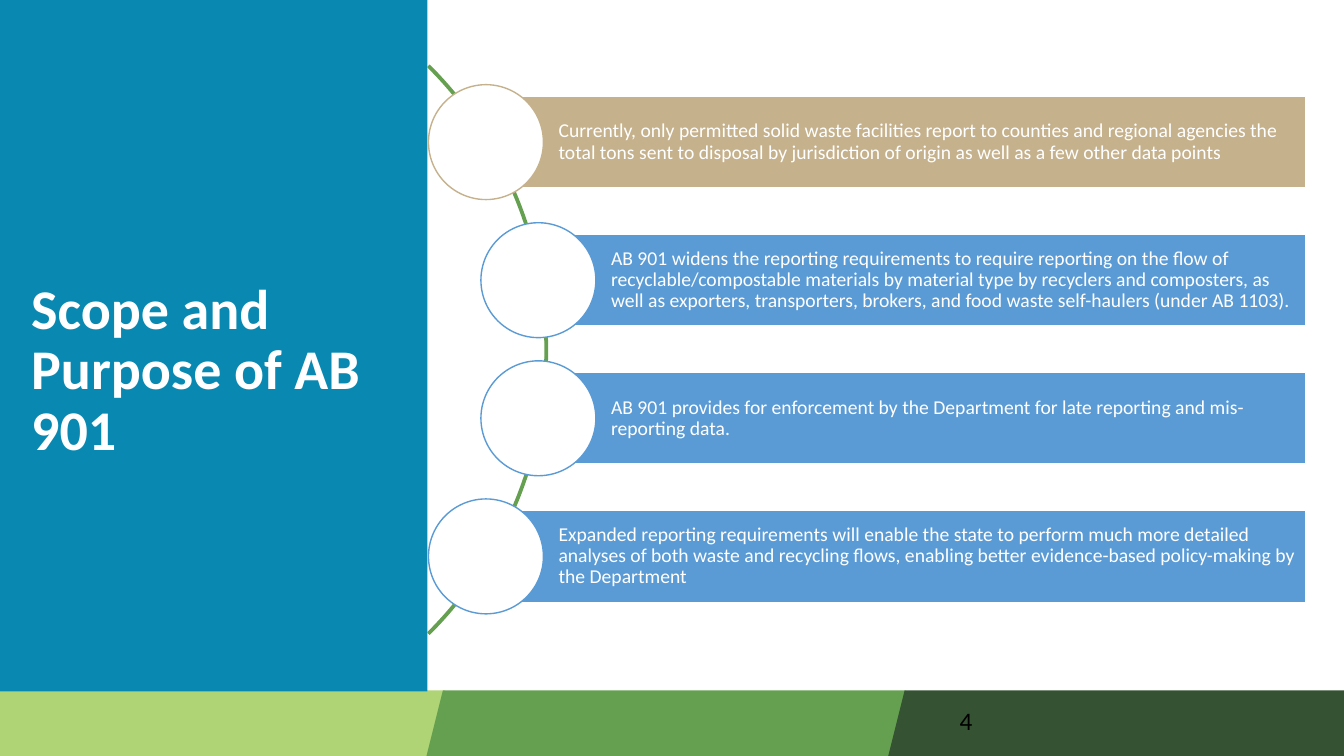
import dataclasses

import pptx
import pptx.dml.color
import pptx.enum.shapes
import pptx.enum.text
import pptx.util

Inches = pptx.util.Inches
Pt = pptx.util.Pt
Shape = pptx.enum.shapes.MSO_SHAPE
Anchor = pptx.enum.text.MSO_ANCHOR


@dataclasses.dataclass(frozen=True)
class Theme:
    font: str = "Calibri"
    white: str = "FFFFFF"
    black: str = "000000"
    panel: str = "0989B1"
    lime: str = "AFD476"
    green: str = "65A050"
    forest: str = "355232"
    tan: str = "C6B18D"
    blue: str = "5B9BD5"
    title_size: int = 40
    number_size: int = 18
    body_size: int = 14


class SlideBuilder:
    def __init__(self, prs, theme):
        self.theme = theme
        self.s = prs.slides.add_slide(prs.slide_layouts[5])

    def shape(self, kind, box, fill, line=None):
        sp = self.s.shapes.add_shape(kind, *map(Inches, box))
        sp.shadow.inherit = False
        sp.fill.solid()
        sp.fill.fore_color.rgb = pptx.dml.color.RGBColor.from_string(fill)
        if line:
            sp.line.color.rgb = pptx.dml.color.RGBColor.from_string(line)
            sp.line.width = Pt(1)
        else:
            sp.line.fill.background()
        return sp

    def set_text(self, sp, text, size, color, bold=False, spacing=None):
        """Fill a shape with one left-aligned, vertically centred paragraph."""
        tf = sp.text_frame
        tf.word_wrap = True
        tf.auto_size = pptx.enum.text.MSO_AUTO_SIZE.NONE
        tf.vertical_anchor = Anchor.MIDDLE
        p = tf.paragraphs[0]
        p.alignment = pptx.enum.text.PP_ALIGN.LEFT
        p.line_spacing = spacing
        r = p.add_run()
        r.text = text
        r.font.name = self.theme.font
        r.font.size = Pt(size)
        r.font.bold = bold
        r.font.color.rgb = pptx.dml.color.RGBColor.from_string(color)

    def title(self, text, box):
        """Place the title placeholder in front of the shapes drawn so far."""
        sp = self.s.shapes.title
        sp.left, sp.top, sp.width, sp.height = map(Inches, box)
        sp.element.getparent().append(sp.element)
        self.set_text(sp, text, self.theme.title_size, self.theme.white, True, 0.9)

    def number(self, text, box):
        sp = self.s.shapes.add_textbox(*map(Inches, box))
        self.set_text(sp, text, self.theme.number_size, self.theme.black)

    def arc(self, box, color):
        sp = self.shape(Shape.BLOCK_ARC, box, color, color)
        # Sweep from 315 to 45 degrees, in 60000ths of a degree over 100000
        sp.adjustments[0] = 189
        sp.adjustments[1] = 27
        sp.adjustments[2] = 0.003

    def point(self, text, center_x, center_y, color):
        """Draw a bar that runs to the right edge, with a circle at its start."""
        bar_height, diameter, right = 0.91, 1.14, 12.95
        bar = self.shape(
            Shape.RECTANGLE,
            (center_x, center_y - bar_height / 2, right - center_x, bar_height),
            color, self.theme.white)
        tf = bar.text_frame
        tf.margin_left = Inches(0.72)
        tf.margin_top = tf.margin_right = tf.margin_bottom = Inches(0.04)
        self.set_text(bar, text, self.theme.body_size, self.theme.white, spacing=0.9)
        self.shape(
            Shape.OVAL,
            (center_x - diameter / 2, center_y - diameter / 2, diameter, diameter),
            self.theme.white, color)


def main():
    prs = pptx.Presentation()
    prs.slide_width, prs.slide_height = Inches(13.33), Inches(7.5)
    theme = Theme()
    slide = SlideBuilder(prs, theme)

    for left, width, color in ((-0.18, 4.59, theme.lime),
                               (4.23, 4.75, theme.green),
                               (8.81, 4.7, theme.forest)):
        slide.shape(Shape.PARALLELOGRAM, (left, 6.85, width, 0.65), color)
    slide.shape(Shape.RECTANGLE, (0, 0, 4.24, 6.86), theme.panel)
    slide.number("4", (9.42, 6.95, 3, 0.4))

    slide.arc((-2.55, -0.52, 7.98, 7.98), theme.green)
    outer, inner = 4.82, 5.34
    points = (
        (outer, theme.tan,
         "Currently, only permitted solid waste facilities report to counties and "
         "regional agencies the total tons sent to disposal by jurisdiction of origin "
         "as well as a few other data points"),
        (inner, theme.blue,
         "AB 901 widens the reporting requirements to require reporting on the flow of "
         "recyclable/compostable materials by material type by recyclers and "
         "composters, as well as exporters, transporters, brokers, and food waste "
         "self-haulers (under AB 1103)."),
        (inner, theme.blue,
         "AB 901 provides for enforcement by the Department for late reporting and "
         "mis-reporting data."),
        (outer, theme.blue,
         "Expanded reporting requirements will enable the state to perform much more "
         "detailed analyses of both waste and recycling flows, enabling better "
         "evidence-based policy-making by the Department"),
    )
    first_y, pitch = 1.41, 1.37
    for i, (center_x, color, text) in enumerate(points):
        slide.point(text, center_x, first_y + i * pitch, color)

    slide.title("Scope and Purpose of AB 901", (0.21, 1.96, 4.21, 3.45))
    prs.save("out.pptx")


if __name__ == "__main__":
    main()
